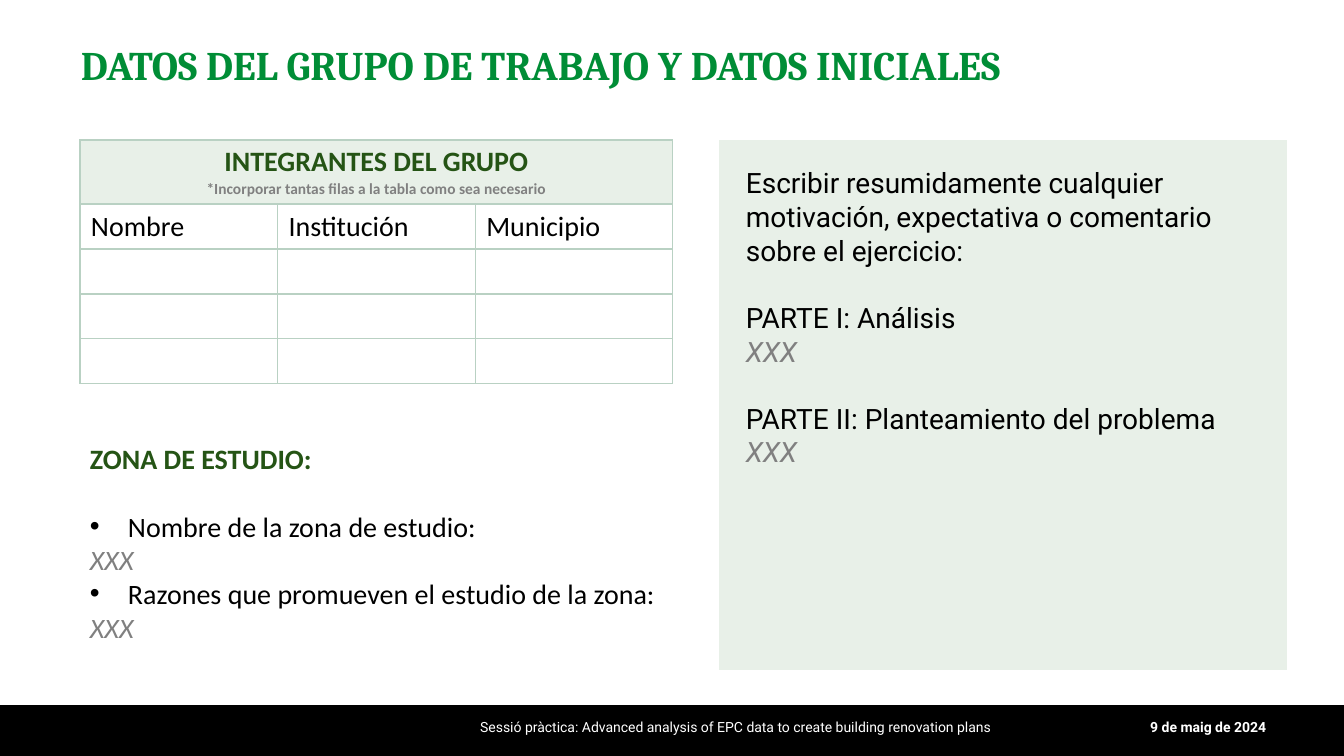
from lxml import etree
from pptx import Presentation, util as u
from pptx.dml import color
from pptx.enum import shapes, text
from pptx.oxml import ns

PX = 914400 / 100.8
GREEN, DARK_GREEN, PALE_GREEN, BORDER = "008D36", "255415", "E8F0E8", "B9D1C3"
BLACK, WHITE, GREY = "000000", "FFFFFF", "808080"
BLANK_LINE = 24  # points
ALIGN = text.PP_ALIGN
PLACEHOLDER = {"wording": "XXX", "hex_color": GREY, "italic": True}


def px(length):
    return u.Emu(round(length * PX))


def rgb(hex_color):
    return color.RGBColor.from_string(hex_color)


def add_bullet(paragraph, indent):
    properties = paragraph._p.get_or_add_pPr()
    properties.set("marL", str(px(indent)))
    properties.set("indent", str(-px(indent)))
    etree.SubElement(properties, ns.qn("a:buFont"), typeface="Arial")
    etree.SubElement(properties, ns.qn("a:buChar"), char="•")


def add_line(paragraph, wording, font, size=20, hex_color=BLACK, bold=False,
             italic=False, align=ALIGN.LEFT, bullet=False, before=0):
    paragraph.alignment = align
    paragraph.space_before = u.Pt(before)
    if bullet:
        add_bullet(paragraph, 38)
    run = paragraph.add_run()
    run.text = wording
    run.font.name, run.font.size = font, u.Pt(size)
    run.font.bold, run.font.italic = bold, italic
    run.font.color.rgb = rgb(hex_color)


def write_lines(frame, font, lines):
    for index, line in enumerate(lines):
        paragraph = frame.add_paragraph() if index else frame.paragraphs[0]
        add_line(paragraph, font=font, **line)


def add_text(slide, box, font, lines, anchor=text.MSO_ANCHOR.TOP):
    frame = slide.shapes.add_textbox(*map(px, box)).text_frame
    frame.word_wrap = True
    frame.vertical_anchor = anchor
    write_lines(frame, font, lines)


def add_panel(slide, box, fill):
    shape = slide.shapes.add_shape(shapes.MSO_SHAPE.RECTANGLE, *map(px, box))
    shape.shadow.inherit = False
    shape.fill.solid()
    shape.fill.fore_color.rgb = rgb(fill)
    shape.line.fill.background()


def add_title(slide, box):
    add_text(slide, box, "Cambria", [
        {"wording": "DATOS DEL GRUPO DE TRABAJO Y DATOS INICIALES",
         "size": 29, "hex_color": GREEN, "bold": True}])


def add_footer(slide, box):
    left, top, width, height = box
    add_panel(slide, box, BLACK)
    add_text(slide, (left + 339, top + 9, 793, 27), "Roboto", [
        {"wording": "Sessió pràctica: Advanced analysis of EPC data to create "
                    "building renovation plans",
         "size": 10, "hex_color": WHITE, "align": ALIGN.CENTER}])
    add_text(slide, (left + width - 394, top + 2, 326, 40), "Roboto", [
        {"wording": "9 de maig de 2024", "size": 10, "hex_color": WHITE,
         "bold": True, "align": ALIGN.RIGHT}], text.MSO_ANCHOR.MIDDLE)


def style_cell(cell, fill):
    properties = cell._tc.get_or_add_tcPr()
    for side in ("lnL", "lnR", "lnT", "lnB"):
        line = etree.SubElement(properties, ns.qn(f"a:{side}"), w=str(u.Pt(1)))
        solid = etree.SubElement(line, ns.qn("a:solidFill"))
        etree.SubElement(solid, ns.qn("a:srgbClr"), val=BORDER)
    cell.fill.solid()
    cell.fill.fore_color.rgb = rgb(fill)
    cell.margin_left = cell.margin_right = px(11)
    cell.margin_top = cell.margin_bottom = px(5)


def add_members_table(slide, box):
    headings = ["Nombre", "Institución", "Municipio"]
    header_height, row_count = 64, 5
    table = slide.shapes.add_table(row_count, len(headings), *map(px, box)).table
    table.first_row = table.horz_banding = False
    for column in table.columns:
        column.width = px(box[2] / len(headings))
    for index, row in enumerate(table.rows):
        body_height = (box[3] - header_height) / (row_count - 1)
        row.height = px(body_height if index else header_height)
        for cell in row.cells:
            style_cell(cell, WHITE if index else PALE_GREEN)
    header = table.cell(0, 0)
    header.merge(table.cell(0, len(headings) - 1))
    write_lines(header.text_frame, "Calibri", [
        {"wording": "INTEGRANTES DEL GRUPO", "hex_color": DARK_GREEN,
         "bold": True, "align": ALIGN.CENTER},
        {"wording": "*Incorporar tantas filas a la tabla como sea necesario",
         "size": 11, "hex_color": GREY, "bold": True, "align": ALIGN.CENTER}])
    for column, heading in enumerate(headings):
        cell = table.cell(1, column)
        cell.vertical_anchor = text.MSO_ANCHOR.MIDDLE
        write_lines(cell.text_frame, "Calibri", [{"wording": heading}])


def add_study_area(slide, box):
    add_text(slide, box, "Calibri", [
        {"wording": "ZONA DE ESTUDIO:", "hex_color": DARK_GREEN, "bold": True},
        {"wording": "Nombre de la zona de estudio:", "bullet": True,
         "before": BLANK_LINE},
        PLACEHOLDER,
        {"wording": "Razones que promueven el estudio de la zona:",
         "bullet": True},
        PLACEHOLDER])


def add_comments(slide, box):
    left, top, width, height = box
    add_panel(slide, box, PALE_GREEN)
    add_text(slide, (left + 17, top + 21, width - 28, height - 34), "Roboto", [
        {"wording": "Escribir resumidamente cualquier motivación, expectativa "
                    "o comentario sobre el ejercicio:"},
        {"wording": "PARTE I: Análisis", "before": BLANK_LINE},
        PLACEHOLDER,
        {"wording": "PARTE II: Planteamiento del problema",
         "before": BLANK_LINE},
        PLACEHOLDER])


def main():
    presentation = Presentation()
    presentation.slide_width, presentation.slide_height = px(1344), px(756)
    slide = presentation.slides.add_slide(presentation.slide_layouts[6])
    add_footer(slide, (0, 705, 1344, 51))
    add_title(slide, (71, 35, 1189, 71))
    add_members_table(slide, (80, 140, 593, 244))
    add_study_area(slide, (80, 437, 593, 232))
    add_comments(slide, (719, 140, 568, 530))
    presentation.save("out.pptx")


if __name__ == "__main__":
    main()
